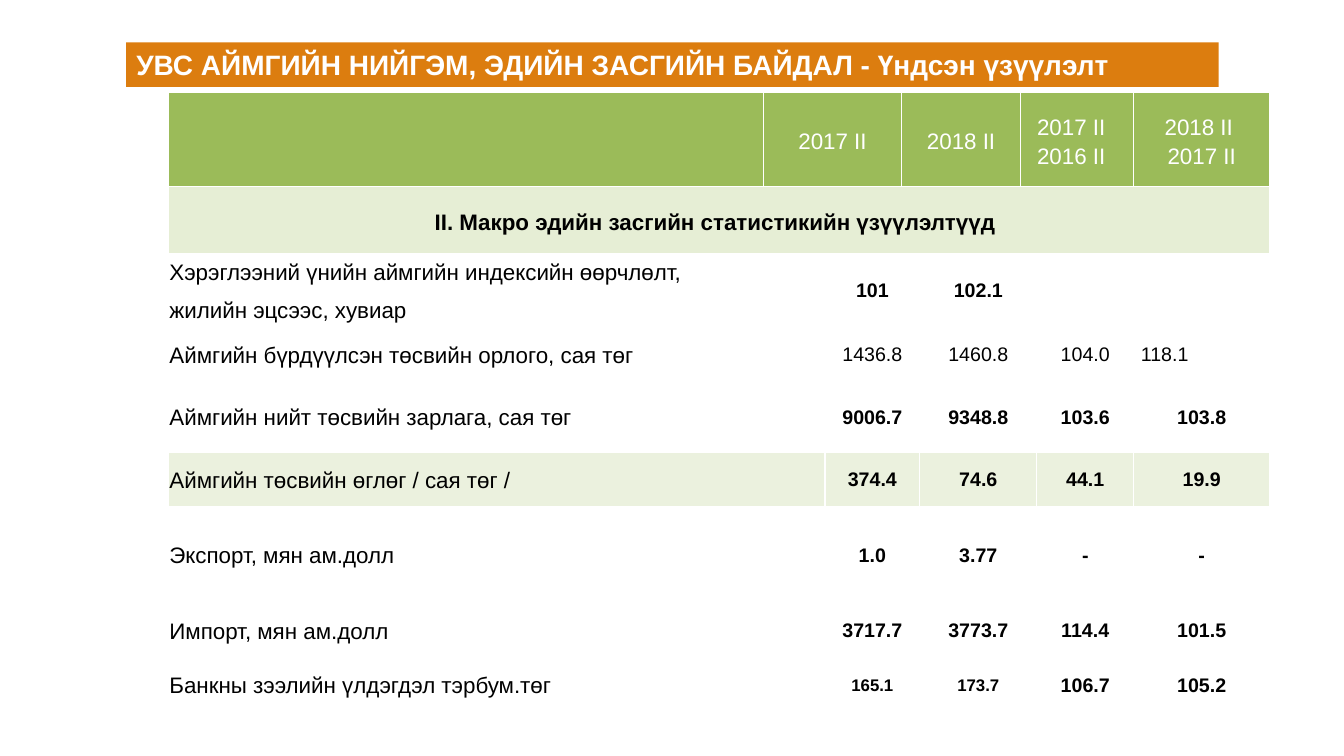
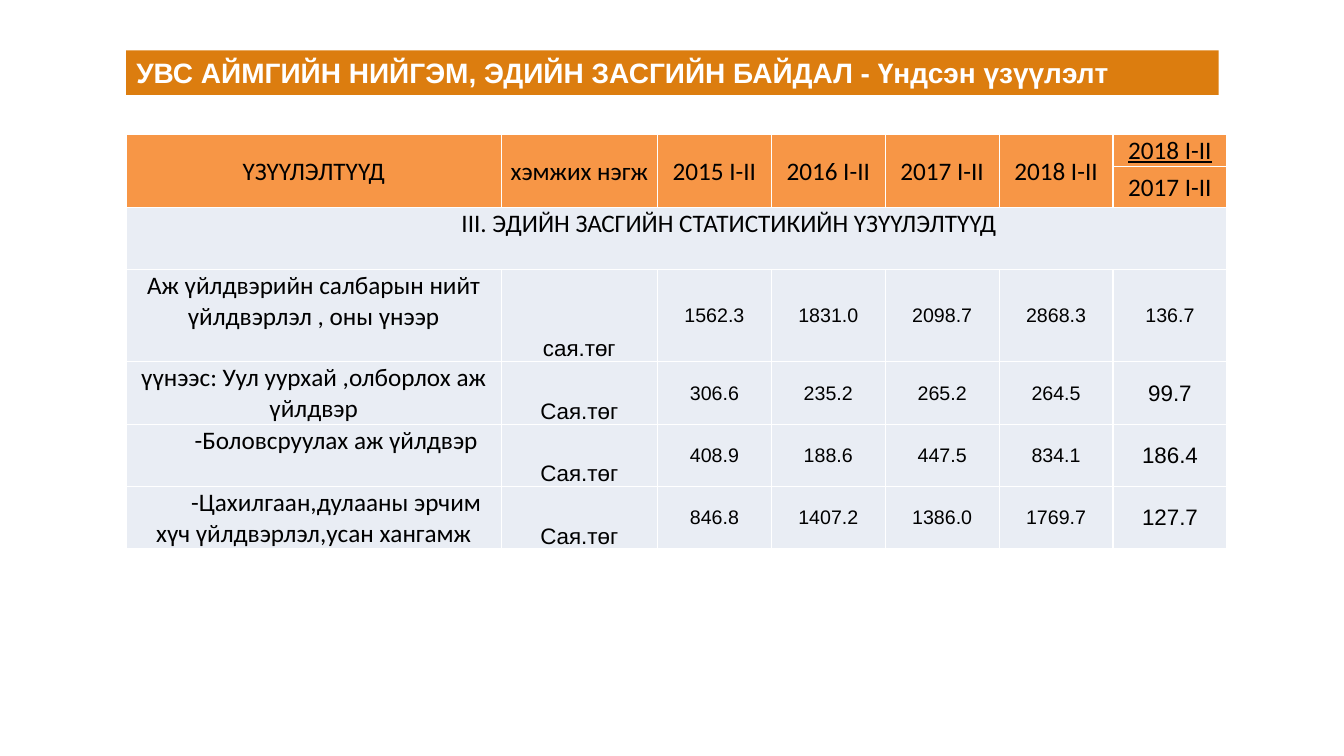
from lxml.etree import SubElement
from pptx import Presentation
from pptx.dml.color import RGBColor
from pptx.enum.text import MSO_ANCHOR, MSO_AUTO_SIZE, PP_ALIGN
from pptx.oxml.ns import qn
from pptx.util import Cm, Pt

HUES = {
    "white": "FFFFFF", "black": "000000", "band": "DC7D0F",
    "green": "9BBB59", "pale": "E6EED5", "soft": "EBF1DE",
    "orange": "F79646", "mist": "E9EDF4",
}
TITLE = "УВС АЙМГИЙН НИЙГЭМ, ЭДИЙН ЗАСГИЙН БАЙДАЛ - Үндсэн үзүүлэлт"


def tint(name):
    return RGBColor.from_string(HUES[name])


class Deck:
    def __init__(self):
        self.prs = Presentation()
        self.prs.slide_width, self.prs.slide_height = Cm(33.87), Cm(19.05)
        self.slide = None
        self.grid = None

    def page(self, text, top):
        self.slide = self.prs.slides.add_slide(self.prs.slide_layouts[5])
        title = self.slide.shapes.title
        title.left, title.top = Cm(3.18), Cm(top)
        title.width, title.height = Cm(27.53), Cm(1.12)
        title.fill.solid()
        title.fill.fore_color.rgb = tint("band")
        frame = title.text_frame
        frame.text = text
        frame.word_wrap = True
        frame.auto_size = MSO_AUTO_SIZE.NONE
        frame.vertical_anchor = MSO_ANCHOR.MIDDLE
        para = frame.paragraphs[0]
        para.alignment = PP_ALIGN.LEFT
        para.space_before = Pt(0)
        self.style(para, 20, True, "Arial", "white")

    def style(self, para, size, bold, face, hue, under=False):
        for run in para.runs:
            font = run.font
            font.size, font.bold, font.name = Pt(size), bold, face
            font.underline = under
            font.color.rgb = tint(hue)

    def table(self, left, top, cols, rows, fills):
        frame = self.slide.shapes.add_table(
            len(rows), len(cols), Cm(left), Cm(top), Cm(sum(cols)), Cm(sum(rows)))
        self.grid = frame.table
        self.grid.first_row = self.grid.horz_banding = False
        for col, width in zip(self.grid.columns, cols):
            col.width = Cm(width)
        for row, height, fill in zip(self.grid.rows, rows, fills):
            row.height = Cm(height)
            for cell in row.cells:
                self.paint(cell, fill)

    def paint(self, cell, fill):
        cell.margin_left = cell.margin_right = cell.margin_top = Cm(0.03)
        cell.margin_bottom = 0
        props = cell._tc.get_or_add_tcPr()
        for side in ("lnL", "lnR", "lnT", "lnB"):
            line = SubElement(props, qn(f"a:{side}"), w=str(Pt(1)))
            SubElement(SubElement(line, qn("a:solidFill")),
                       qn("a:srgbClr"), val=HUES["white"])
        cell.fill.solid()
        cell.fill.fore_color.rgb = tint(fill)

    def cell(self, row, col, text, size=14, bold=False, face="Arial", hue="black",
             align=PP_ALIGN.CENTER, anchor=MSO_ANCHOR.MIDDLE, span=(1, 1),
             lead=None, after=0, under=False, shifts=()):
        cell = self.grid.cell(row, col)
        if span != (1, 1):
            cell.merge(self.grid.cell(row + span[0] - 1, col + span[1] - 1))
        cell.text_frame.text = text
        cell.vertical_anchor = anchor
        paras = cell.text_frame.paragraphs
        for para, (mark, gap) in zip(paras, shifts):
            para._p.get_or_add_pPr().set(mark, str(Cm(gap)))
        for para in paras:
            para.alignment = align
            para.space_after = Pt(after)
            if lead:
                para.line_spacing = lead
            self.style(para, size, bold, face, hue, under)


def macro(deck):
    deck.page(TITLE, 1.07)
    deck.table(4.24, 2.34, [15, 1.55, 1.93, 0.46, 2.54, 0.41, 2.44, 3.43],
               [2.36, 1.7, 1.84, 1.37, 1.78, 1.37, 2.44, 1.37, 1.37],
               ["green", "pale"] + ["white"] * 3 + ["soft"] + ["white"] * 3)
    deck.cell(0, 0, "", span=(1, 1))
    heads = [
        (1, 2, "2017 II", ()),
        (3, 2, "2018 II", ()),
        (5, 2, "2017 II\n2016 II", [("marR", 0.3)] * 2),
        (7, 1, "2018 II\n2017 II", [("marR", 0.15), ("marL", 0.15)]),
    ]
    for col, wide, text, shifts in heads:
        deck.cell(0, col, text, 16, hue="white", span=(1, wide), lead=1.15,
                  shifts=shifts)
    deck.cell(1, 0, "II. Макро эдийн засгийн статистикийн үзүүлэлтүүд", 16, True,
              span=(1, 8), lead=1.15, shifts=[("marR", 0.2)])
    data = [
        ("Хэрэглээний үнийн аймгийн индексийн өөрчлөлт,\nжилийн эцсээс, хувиар",
         "101", "102.1", "", ""),
        ("Аймгийн бүрдүүлсэн төсвийн орлого, сая төг",
         "1436.8", "1460.8", "104.0", "118.1"),
        ("Аймгийн нийт төсвийн зарлага, сая төг",
         "9006.7", "9348.8", "103.6", "103.8"),
        ("Аймгийн төсвийн өглөг / сая төг /", "374.4", "74.6", "44.1", "19.9"),
        ("Экспорт, мян ам.долл", "1.0", "3.77", "-", "-"),
        ("Импорт, мян ам.долл", "3717.7", "3773.7", "114.4", "101.5"),
        ("Банкны зээлийн үлдэгдэл тэрбум.төг", "165.1", "173.7", "106.7", "105.2"),
    ]
    for row, (label, *nums) in enumerate(data, 2):
        deck.cell(row, 0, label, 16, align=PP_ALIGN.LEFT, span=(1, 2),
                  lead=1.07, after=8)
        for col, wide, num in zip((2, 4, 6, 7), (2, 2, 1, 1), nums):
            aside = num == "118.1"
            deck.cell(row, col, num, 12 if row == 8 and col < 6 else 14, row != 3,
                      align=PP_ALIGN.LEFT if aside else PP_ALIGN.CENTER,
                      span=(1, wide), shifts=[("marL", 0.15)] if aside else ())


def trade(deck):
    deck.page(TITLE, 1.27)
    deck.table(3.18, 3.38, [9.45, 3.94] + [2.87] * 5,
               [0.81, 1.04, 1.56, 2.32] + [1.56] * 3,
               ["orange"] * 2 + ["mist"] * 5)
    heads = ["ҮЗҮҮЛЭЛТҮҮД", "хэмжих нэгж"]
    heads += [f"{year} I-II" for year in range(2015, 2019)]
    for col, text in enumerate(heads):
        deck.cell(0, col, text, 18, face="Calibri", span=(2, 1))
    deck.cell(0, 6, "2018 I-II", 18, face="Calibri", under=True)
    deck.cell(1, 6, "2017 I-II", 18, face="Calibri")
    deck.cell(2, 0, "III. ЭДИЙН ЗАСГИЙН СТАТИСТИКИЙН ҮЗҮҮЛЭЛТҮҮД", 18,
              face="Calibri", align=PP_ALIGN.LEFT, anchor=MSO_ANCHOR.TOP,
              span=(1, 7), shifts=[("marL", 8.42)])
    data = [
        ("Аж үйлдвэрийн салбарын нийт үйлдвэрлэл , оны үнээр", "сая.төг",
         "1562.3", "1831.0", "2098.7", "2868.3", "136.7"),
        ("үүнээс: Уул уурхай ,олборлох аж үйлдвэр", "Сая.төг",
         "306.6", "235.2", "265.2", "264.5", "99.7"),
        ("-Боловсруулах аж үйлдвэр", "Сая.төг",
         "408.9", "188.6", "447.5", "834.1", "186.4"),
        ("-Цахилгаан,дулааны эрчим хүч үйлдвэрлэл,усан хангамж", "Сая.төг",
         "846.8", "1407.2", "1386.0", "1769.7", "127.7"),
    ]
    for row, (label, unit, *nums) in enumerate(data, 3):
        deck.cell(row, 0, label, 18, face="Calibri", anchor=MSO_ANCHOR.TOP,
                  shifts=[("indent", 1.13)] if label.startswith("-") else ())
        deck.cell(row, 1, unit, 16, anchor=MSO_ANCHOR.BOTTOM)
        for col, num in enumerate(nums, 2):
            deck.cell(row, col, num, 16 if col == 6 and row > 3 else 14)


def main():
    deck = Deck()
    macro(deck)
    trade(deck)
    deck.prs.save("out.pptx")


if __name__ == "__main__":
    main()
